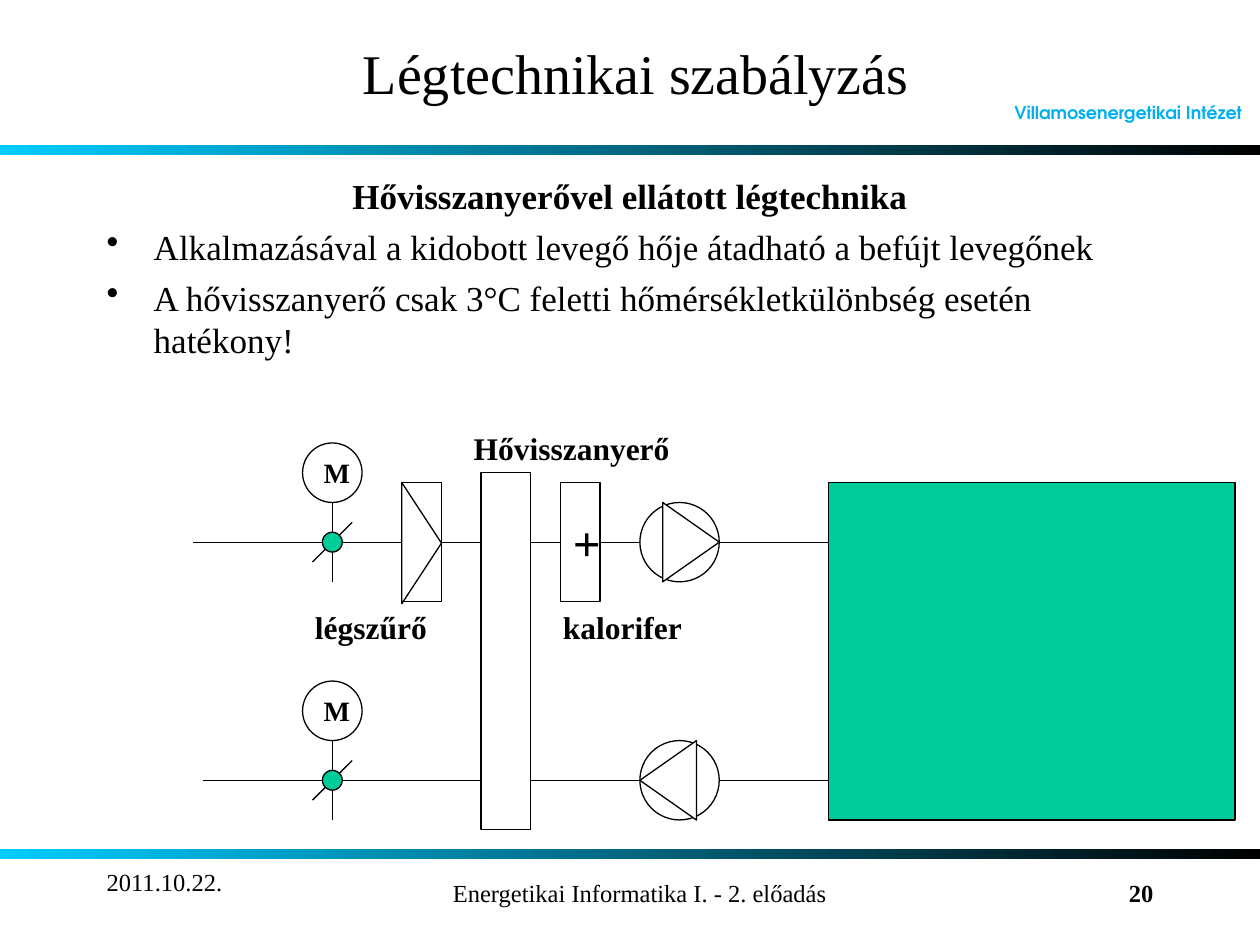
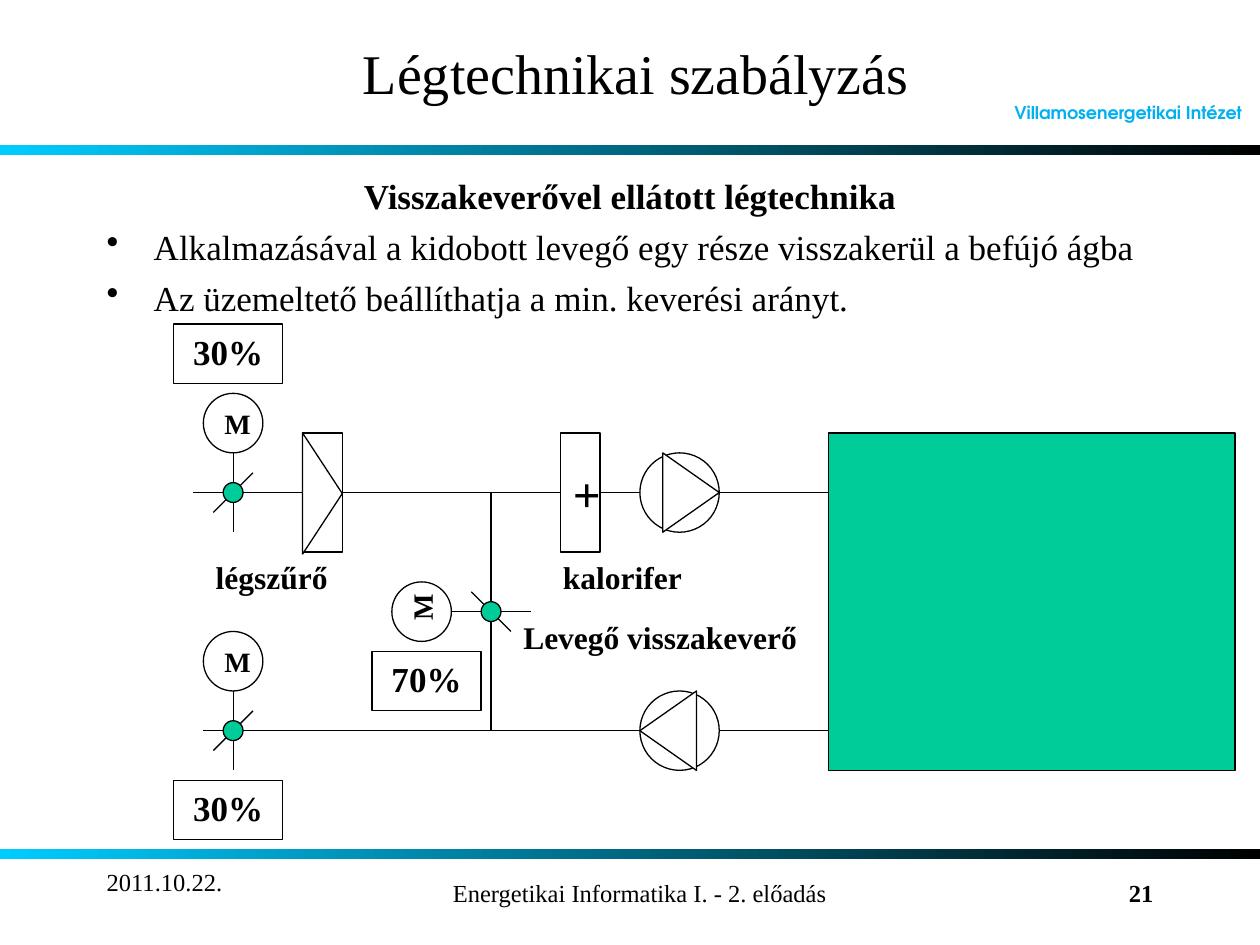
"""Builds two slides on ventilation control with air handling diagrams."""
from dataclasses import dataclass

from lxml import etree
from pptx import Presentation
from pptx.dml.color import RGBColor
from pptx.enum.shapes import MSO_CONNECTOR, MSO_SHAPE
from pptx.enum.text import MSO_ANCHOR, PP_ALIGN
from pptx.oxml.ns import qn
from pptx.util import Cm, Pt

RECT, OVAL, TRIANGLE = MSO_SHAPE.RECTANGLE, MSO_SHAPE.OVAL, MSO_SHAPE.ISOSCELES_TRIANGLE
STRAIGHT = MSO_CONNECTOR.STRAIGHT
LEFT, CENTER, RIGHT = PP_ALIGN.LEFT, PP_ALIGN.CENTER, PP_ALIGN.RIGHT
TOP, MIDDLE = MSO_ANCHOR.TOP, MSO_ANCHOR.MIDDLE


@dataclass(frozen=True)
class Theme:
    """Colours, fonts and sizes shared by the slides."""
    black: RGBColor = RGBColor(0, 0, 0)
    white: RGBColor = RGBColor(255, 255, 255)
    green: RGBColor = RGBColor(0x00, 0xCC, 0x99)
    cyan: RGBColor = RGBColor(0x00, 0xCC, 0xFF)
    sky: RGBColor = RGBColor(0x00, 0xB0, 0xF0)
    font: str = "Times New Roman"
    institute_font: str = "TeX Gyre Adventor"
    title: int = 32
    plus: int = 28
    body: int = 20
    label: int = 18
    motor: int = 16
    footer: int = 14
    institute: int = 10
    line: float = 0.75


T = Theme()
SUPPLY_Y, EXHAUST_Y = 1.2, 6.0
MIX_X, MIX_Y = 6.0, (SUPPLY_Y + EXHAUST_Y) / 2


def style(p, size, bold=False, align=LEFT, color=T.black, font=T.font):
    """Format a paragraph and its runs."""
    p.alignment = align
    for r in p.runs:
        r.font.size, r.font.bold, r.font.name = Pt(size), bold, font
        r.font.color.rgb = color


def add_text(slide, box, text, size, anchor=TOP, **kwargs):
    """Add a wrapped text box of one paragraph."""
    tf = slide.shapes.add_textbox(*map(Cm, box)).text_frame
    tf.word_wrap, tf.vertical_anchor = True, anchor
    tf.text = text
    style(tf.paragraphs[0], size, **kwargs)
    return tf


def add_part(slide, kind, box, fill=T.white, rotation=0, text="", size=T.body, anchor=MIDDLE):
    """Add an outlined shape, with bold centred text if given."""
    sp = slide.shapes.add_shape(kind, *map(Cm, box))
    sp.shadow.inherit = False
    sp.fill.solid()
    sp.fill.fore_color.rgb = fill
    sp.line.color.rgb, sp.line.width = T.black, Pt(T.line)
    sp.rotation = rotation
    if text:
        sp.text_frame.text = text
        sp.text_frame.vertical_anchor = anchor
        style(sp.text_frame.paragraphs[0], size, True, CENTER)


def add_centred(slide, kind, x, y, w, h, **kwargs):
    """Add a part by its centre point."""
    add_part(slide, kind, (x - w / 2, y - h / 2, w, h), **kwargs)


def add_line(slide, x1, y1, x2, y2):
    """Add a thin black line."""
    cx = slide.shapes.add_connector(STRAIGHT, Cm(x1), Cm(y1), Cm(x2), Cm(y2))
    cx.line.color.rgb, cx.line.width = T.black, Pt(T.line)
    etree.SubElement(cx._element.spPr, qn("a:effectLst"))


def add_band(slide, top):
    """Add a full-width gradient band."""
    sp = slide.shapes.add_shape(RECT, 0, Cm(top), Cm(25.4), Cm(0.2))
    sp.shadow.inherit = False
    sp.line.fill.background()
    sp.fill.gradient()
    sp.fill.gradient_angle = 0
    for stop, color in zip(sp.fill.gradient_stops, (T.cyan, T.black)):
        stop.color.rgb = color


def add_frame(slide, number):
    """Add the bands, institute name, title and footer."""
    for top in (2.92, 17.12):
        add_band(slide, top)
    add_text(slide, (20.2, 1.93, 5.2, 0.68), "Villamosenergetikai Intézet", T.institute,
             MIDDLE, bold=True, color=T.sky, font=T.institute_font)
    add_text(slide, (3.3, 0.71, 19.05, 1.48), "Légtechnikai szabályzás", T.title,
             MIDDLE, align=CENTER)
    add_text(slide, (1.9, 17.35, 5.3, 1.27), "2011.10.22.", T.footer)
    add_text(slide, (5.28, 17.58, 15.24, 1.06), "Energetikai Informatika I. - 2. előadás",
             T.footer, align=CENTER)
    add_text(slide, (18.2, 17.58, 5.3, 1.06), str(number), T.footer, bold=True, align=RIGHT)


def add_body(slide, heading, bullets):
    """Add the bold heading and the bulleted lines."""
    tf = add_text(slide, (1.9, 3.4, 21.6, 13.34), heading, T.body, bold=True, align=CENTER)
    for text in bullets:
        p = tf.add_paragraph()
        pPr = p._p.get_or_add_pPr()
        pPr.set("marL", str(Cm(0.95)))
        pPr.set("indent", str(-Cm(0.95)))
        etree.SubElement(pPr, qn("a:buChar")).set("char", "•")
        p.text = text
        p.space_before = Pt(5)
        style(p, T.body)


def add_damper(slide, x, y, turned=False):
    """Add a motor-driven damper centred at a point, turned left if asked."""
    def at(dx, dy):
        return (x + dy, y - dx) if turned else (x + dx, y + dy)

    add_line(slide, *at(0, -0.8), *at(0, 0.8))
    add_line(slide, *at(-0.4, 0.4), *at(0.4, -0.4))
    add_centred(slide, OVAL, x, y, 0.4, 0.4, fill=T.green)
    add_centred(slide, OVAL, *at(0, -1.4), 1.2, 1.2, text="M", size=T.motor,
                rotation=270 if turned else 0)


def add_fan(slide, x, y, direction):
    """Add a fan centred at a point, blowing right (1) or left (-1)."""
    add_centred(slide, OVAL, x, y, 1.6, 1.6)
    add_centred(slide, TRIANGLE, x + direction * 0.23, y, 1.6, 1.14,
                rotation=90 if direction > 0 else 270)


def add_label(slide, x, y, width, text):
    """Add a bold part label."""
    add_text(slide, (x, y, width, 1), text, T.label, bold=True)


def add_plant(slide, left, top, damper_x):
    """Add the ducts, dampers, fans, filter, heater and room."""
    for start, y, direction in ((0.2, EXHAUST_Y, -1), (0, SUPPLY_Y, 1)):
        add_line(slide, left + start, top + y, left + 13, top + y)
        add_damper(slide, left + damper_x, top + y)
        add_fan(slide, left + 9.8, top + y, direction)
    add_part(slide, RECT, (left + 12.8, top, 8.2, 6.8), T.green)
    filter_x = left + damper_x + 1.8
    add_centred(slide, RECT, filter_x, top + SUPPLY_Y, 0.8, 2.4)
    add_centred(slide, TRIANGLE, filter_x, top + SUPPLY_Y + 0.02, 2.44, 0.8, rotation=90)
    add_label(slide, left + damper_x - 0.6, top + 2.4, 2.8, "légszűrő")
    add_label(slide, left + 7.2, top + 2.4, 3.2, "kalorifer")
    add_part(slide, RECT, (left + 7.4, top, 0.8, 2.4), text="+", size=T.plus)


def add_heat_recovery(slide, left, top):
    """Add the heat exchanger across both ducts."""
    add_label(slide, left + 5.4, top - 1.2, 4.6, "Hővisszanyerő")
    add_part(slide, RECT, (left + 5.8, top - 0.2, 1, 7.2))


def add_mixing(slide, left, top):
    """Add the return duct with its damper and the opening ratios."""
    add_label(slide, left + 6.4, top + MIX_Y, 6.4, "Levegő visszakeverő")
    add_line(slide, left + MIX_X, top + SUPPLY_Y, left + MIX_X, top + EXHAUST_Y)
    add_damper(slide, left + MIX_X, top + MIX_Y, turned=True)
    for x, y, ratio in ((-0.4, -2.2, "30%"), (-0.4, 7, "30%"), (3.6, 4.4, "70%")):
        add_part(slide, RECT, (left + x, top + y, 2.2, 1.2), text=ratio, anchor=TOP)


SLIDES = (
    (20, "Hővisszanyerővel ellátott légtechnika",
     ("Alkalmazásával a kidobott levegő hője átadható a befújt levegőnek",
      "A hővisszanyerő csak 3°C feletti hőmérsékletkülönbség esetén hatékony!"),
     9.73, 2.8, add_heat_recovery),
    (21, "Visszakeverővel ellátott légtechnika",
     ("Alkalmazásával a kidobott levegő egy része visszakerül a befújó ágba",
      "Az üzemeltető beállíthatja a min. keverési arányt."),
     8.73, 0.8, add_mixing),
)


def main():
    """Build and save the presentation."""
    prs = Presentation()
    prs.slide_width, prs.slide_height = Cm(25.4), Cm(19.05)
    for number, heading, bullets, top, damper_x, add_extra in SLIDES:
        s = prs.slides.add_slide(prs.slide_layouts[6])
        add_frame(s, number)
        add_body(s, heading, bullets)
        add_plant(s, 3.9, top, damper_x)
        add_extra(s, 3.9, top)
    prs.save("out.pptx")


if __name__ == "__main__":
    main()
